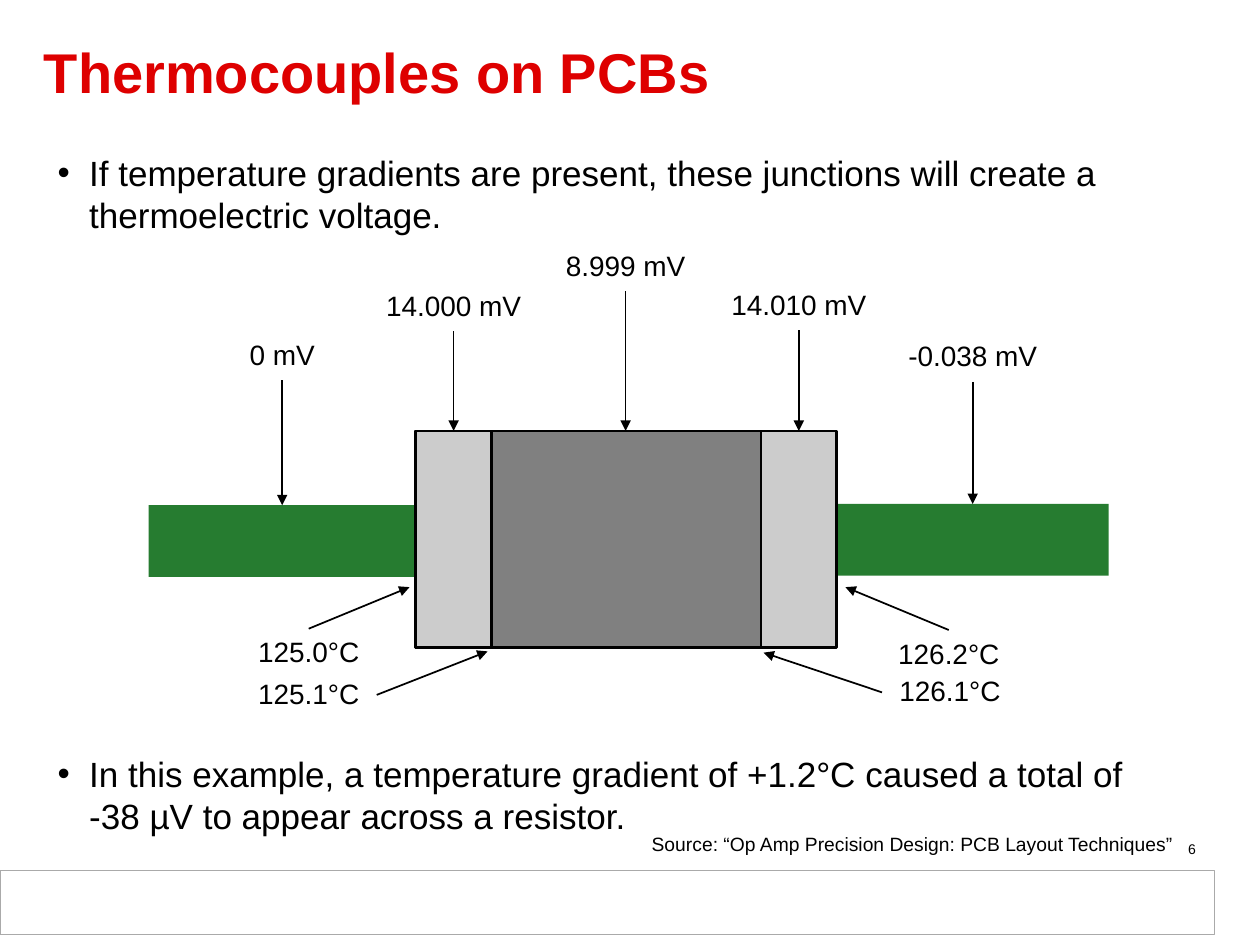
from lxml import etree
from pptx import Presentation
from pptx import util as u
from pptx.dml.color import RGBColor
from pptx.enum import shapes, text
from pptx.oxml.ns import qn

PX = 9144  # EMU per px, 100 px to the inch
FONT = "Arial"
RED = RGBColor(0xDE, 0x00, 0x00)
BLACK = RGBColor(0x00, 0x00, 0x00)
WHITE = RGBColor(0xFF, 0xFF, 0xFF)
RULE_GREY = RGBColor(0xAA, 0xAA, 0xAA)
BODY_GREY = RGBColor(0x80, 0x80, 0x80)
CAP_GREY = RGBColor(0xCC, 0xCC, 0xCC)
TRACE_GREEN = RGBColor(0x26, 0x7C, 0x30)


def emu(*lengths):
    return [u.Emu(round(length * PX)) for length in lengths]


def set_all(target, values):
    for name, value in values.items():
        setattr(target, name, value)


def add_text(slide, box, words, size, align="LEFT", bullet=False, line_spacing=None,
             anchor="TOP", fit=False, bold=False, color=BLACK):
    """Add a one-paragraph text box; fit keeps it on one line and grows the box."""
    shape = slide.shapes.add_textbox(*emu(*box))
    set_all(shape.text_frame, {
        "word_wrap": not fit,
        "auto_size": getattr(text.MSO_AUTO_SIZE, "SHAPE_TO_FIT_TEXT" if fit else "NONE"),
        "vertical_anchor": getattr(text.MSO_ANCHOR, anchor),
    })
    paragraph = shape.text_frame.paragraphs[0]
    paragraph.text = words
    set_all(paragraph, {"alignment": getattr(text.PP_ALIGN, align),
                        "line_spacing": line_spacing})
    if bullet:
        properties = paragraph._p.get_or_add_pPr()
        indent = emu(25)[0]
        properties.set("marL", str(indent))
        properties.set("indent", str(-indent))
        etree.SubElement(properties, qn("a:buFont")).set("typeface", FONT)
        etree.SubElement(properties, qn("a:buChar")).set("char", "•")
    for run in paragraph.runs:
        set_all(run.font, {"name": FONT, "size": u.Pt(size), "bold": bold})
        run.font.color.rgb = color
    return shape


def add_rectangle(slide, box, fill, line=None, width=1.5):
    shape = slide.shapes.add_shape(shapes.MSO_SHAPE.RECTANGLE, *emu(*box))
    shape.shadow.inherit = False
    shape.fill.solid()
    shape.fill.fore_color.rgb = fill
    if line is None:
        shape.line.fill.background()
    else:
        shape.line.color.rgb = line
        shape.line.width = u.Pt(width)
    return shape


def add_arrow(slide, label, site, tip=(0, 0), target=None):
    """Point from a side of a label to a tip, or to the top of a target shape."""
    x, y = emu(*tip)
    arrow = slide.shapes.add_connector(shapes.MSO_CONNECTOR.STRAIGHT, x, y, x, y)
    arrow.begin_connect(label, site)
    if target is not None:
        arrow.end_connect(target, 0)
    arrow.line.color.rgb = BLACK
    arrow.line.width = u.Pt(1)
    etree.SubElement(arrow.line._get_or_add_ln(), qn("a:tailEnd")).set("type", "triangle")
    etree.SubElement(arrow._element.spPr, qn("a:effectLst"))


def add_resistor(slide, left, top):
    """Draw the resistor on its traces, with voltages above and temperatures below."""
    # part: x, y, width, height, fill, outline; voltage: words, y, width
    parts = [
        ((212, 150, 333, 172), BODY_GREY, BLACK, ("8.999 mV", 0, 124)),
        ((0, 209, 212, 57), TRACE_GREEN, None, ("0 mV", 71, 77)),
        ((546, 208, 216, 57), TRACE_GREEN, None, ("-0.038 mV", 72, 132)),
        ((212, 150, 60, 172), CAP_GREY, BLACK, ("14.000 mV", 32, 137)),
        ((486, 150, 60, 172), CAP_GREY, BLACK, ("14.010 mV", 31, 137)),
    ]
    for (x, y, width, height), fill, line, (words, label_y, label_width) in parts:
        part = add_rectangle(slide, (left + x, top + y, width, height), fill, line)
        label_x = left + x + (width - label_width) / 2
        label = add_text(slide, (label_x, top + label_y, label_width, 39), words, 16,
                         align="CENTER", fit=True)
        add_arrow(slide, label, 2, target=part)

    temperatures = [
        ("125.0°C", 73, 307, 0, (207, 274)),
        ("125.1°C", 73, 340, 3, (269, 325)),
        ("126.2°C", 581, 308, 0, (553, 274)),
        ("126.1°C", 582, 338, 1, (488, 326)),
    ]
    for words, x, y, site, (tip_x, tip_y) in temperatures:
        label = add_text(slide, (left + x, top + y, 108, 39), words, 16,
                         align="CENTER", fit=True)
        add_arrow(slide, label, site, tip=(left + tip_x, top + tip_y))


def add_footer(slide, left, top):
    add_rectangle(slide, (left, top + 35, 964, 51), WHITE, RULE_GREY, 0.75)
    add_text(slide, (left + 497, top, 444, 29),
             "Source: “Op Amp Precision Design: PCB Layout Techniques”", 11,
             align="RIGHT", fit=True)
    add_text(slide, (left + 726, top + 6, 233, 23), "6", 8, align="RIGHT")


def main():
    presentation = Presentation()
    presentation.slide_width, presentation.slide_height = emu(1000, 750)
    slide = presentation.slides.add_slide(presentation.slide_layouts[6])
    add_text(slide, (25, 16, 925, 89), "Thermocouples on PCBs", 32, bold=True,
             color=RED, anchor="MIDDLE", line_spacing=0.85)
    bullets = [
        (115, "If temperature gradients are present, these junctions will create a "
              "thermoelectric voltage."),
        (592, "In this example, a temperature gradient of +1.2°C caused a total of"
              "\v-38 µV to appear across a resistor."),
    ]
    for top, words in bullets:
        add_text(slide, (36, top, 926, 80), words, 20, bullet=True)
    add_resistor(slide, 118, 192)
    add_footer(slide, 0, 656)
    presentation.save("out.pptx")


if __name__ == "__main__":
    main()
